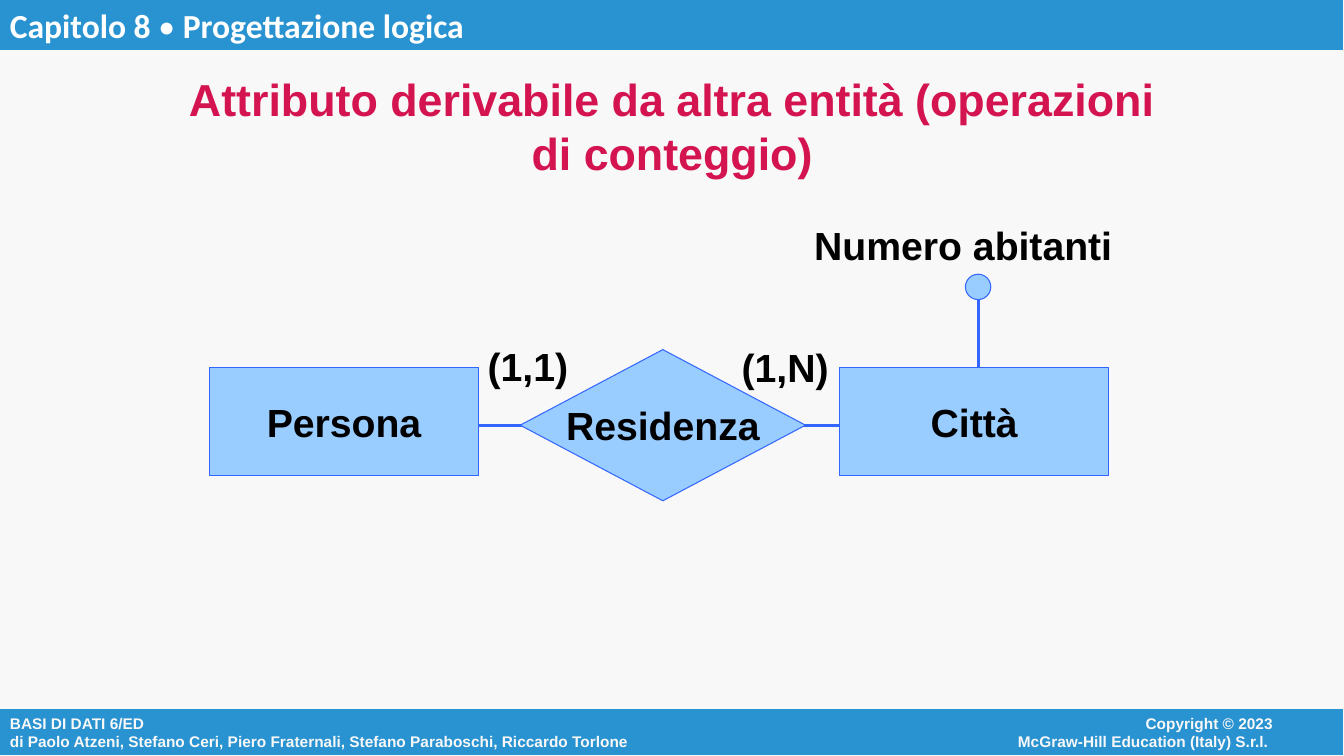
from dataclasses import dataclass

import lxml.etree
import pptx
import pptx.dml.color
import pptx.enum.shapes
import pptx.enum.text
import pptx.oxml.ns
import pptx.util
from pptx.util import Cm

COLORS = {
    "background": "F8F8F8",
    "bar": "2993D1",
    "header_text": "FFFFFF",
    "title": "D41450",
    "node": "99CCFF",
    "outline": "3366FF",
    "label": "000000",
}
SLIDE_WIDTH = 33.87
PRESET = pptx.enum.shapes.MSO_SHAPE
ALIGN = pptx.enum.text.PP_ALIGN
ANCHOR = pptx.enum.text.MSO_ANCHOR


@dataclass(frozen=True)
class Box:
    """Position and size in centimetres."""
    left: float
    top: float
    width: float
    height: float

    def lengths(self) -> tuple:
        return Cm(self.left), Cm(self.top), Cm(self.width), Cm(self.height)


@dataclass(frozen=True)
class Node:
    preset: pptx.enum.shapes.MSO_SHAPE
    box: Box
    text: str = ""


@dataclass(frozen=True)
class Label:
    text: str
    box: Box


@dataclass(frozen=True)
class Line:
    """Start and end points in centimetres."""
    start: tuple[float, float]
    end: tuple[float, float]


HEADER = Box(0, 0, SLIDE_WIDTH, 1.27)
FOOTER = Box(0, 17.86, SLIDE_WIDTH, 1.19)
COPYRIGHT = Box(22.58, 17.86, 9.75, 1.17)
TITLE = Box(3.94, 2.67, 26.01, 0.99)
LINES = [
    Line((11.2, 10.72), (21.56, 10.72)),
    Line((24.66, 7.52), (24.66, 9.42)),
]
NODES = [
    Node(PRESET.DIAMOND, Box(13.11, 8.81, 7.19, 3.81), "Residenza"),
    Node(PRESET.RECTANGLE, Box(5.28, 9.25, 6.78, 2.74), "Persona"),
    Node(PRESET.RECTANGLE, Box(21.16, 9.25, 6.78, 2.74), "Città"),
    Node(PRESET.OVAL, Box(24.33, 6.91, 0.64, 0.64)),
]
LABELS = [
    Label("Numero abitanti", Box(20.27, 5.44, 8.03, 1.42)),
    Label("(1,1)", Box(12.04, 8.51, 2.54, 1.42)),
    Label("(1,N)", Box(18.44, 8.53, 2.69, 1.42)),
]


def rgb(name: str) -> pptx.dml.color.RGBColor:
    return pptx.dml.color.RGBColor.from_string(COLORS[name])


def format_text(text_frame, size: float, color: str, align=ALIGN.LEFT,
                anchor=ANCHOR.TOP, font_name: str = "Arial", wrap: bool = False) -> None:
    text_frame.word_wrap = wrap
    text_frame.auto_size = pptx.enum.text.MSO_AUTO_SIZE.NONE
    text_frame.vertical_anchor = anchor
    for paragraph in text_frame.paragraphs:
        paragraph.alignment = align
        font = paragraph.font
        font.name, font.size, font.bold = font_name, pptx.util.Pt(size), True
        font.color.rgb = rgb(color)


def add_filled_shape(slide, preset, box: Box, fill: str, outline: str, line_width: float = 0.75):
    shape = slide.shapes.add_shape(preset, *box.lengths())
    shape.shadow.inherit = False
    shape.fill.solid()
    shape.fill.fore_color.rgb = rgb(fill)
    shape.line.color.rgb = rgb(outline)
    shape.line.width = pptx.util.Pt(line_width)
    return shape


def add_node(slide, node: Node) -> None:
    shape = add_filled_shape(slide, node.preset, node.box, "node", "outline")
    if node.text:
        shape.text_frame.text = node.text
        format_text(shape.text_frame, 28, "label", ALIGN.CENTER, ANCHOR.MIDDLE)


def add_label(slide, label: Label) -> None:
    text_frame = slide.shapes.add_textbox(*label.box.lengths()).text_frame
    text_frame.text = label.text
    format_text(text_frame, 28, "label")


def add_line(slide, line: Line) -> None:
    connector = slide.shapes.add_connector(
        pptx.enum.shapes.MSO_CONNECTOR.STRAIGHT,
        *(Cm(value) for value in line.start + line.end))
    connector.line.color.rgb = rgb("outline")
    connector.line.width = pptx.util.Pt(2.25)
    lxml.etree.SubElement(connector.element.spPr, pptx.oxml.ns.qn("a:effectLst"))


def add_header(slide) -> None:
    bar = add_filled_shape(slide, PRESET.RECTANGLE, HEADER, "bar", "background", 0)
    paragraph = bar.text_frame.paragraphs[0]
    for text, bold in [("Capitolo 8 ", True), ("•", False), (" Progettazione logica", True)]:
        run = paragraph.add_run()
        run.text = text
        run.font.bold = bold
    format_text(bar.text_frame, 24, "header_text", font_name="Calibri", wrap=True)


def add_footer(slide) -> None:
    bar = add_filled_shape(slide, PRESET.RECTANGLE, FOOTER, "bar", "background")
    bar.text_frame.text = ("BASI DI DATI 6/ED\v"
                           "di Paolo Atzeni, Stefano Ceri, Piero Fraternali, "
                           "Stefano Paraboschi, Riccardo Torlone")
    format_text(bar.text_frame, 11, "background", anchor=ANCHOR.MIDDLE)
    copyright_frame = slide.shapes.add_textbox(*COPYRIGHT.lengths()).text_frame
    copyright_frame.text = "Copyright © 2023\nMcGraw-Hill Education (Italy) S.r.l. "
    format_text(copyright_frame, 11, "background", ALIGN.RIGHT, wrap=True)


def add_title(slide) -> None:
    title = slide.shapes.title
    title.left, title.top, title.width, title.height = TITLE.lengths()
    title.text_frame.text = "Attributo derivabile da altra entità (operazioni di conteggio)"
    format_text(title.text_frame, 32, "title", ALIGN.CENTER, ANCHOR.MIDDLE, wrap=True)


def main() -> None:
    presentation = pptx.Presentation()
    presentation.slide_width = Cm(SLIDE_WIDTH)
    presentation.slide_height = Cm(19.05)
    slide = presentation.slides.add_slide(presentation.slide_layouts.get_by_name("Title Only"))
    slide.background.fill.solid()
    slide.background.fill.fore_color.rgb = rgb("background")

    add_footer(slide)
    add_header(slide)
    add_title(slide)
    for line in LINES:
        add_line(slide, line)
    for node in NODES:
        add_node(slide, node)
    for label in LABELS:
        add_label(slide, label)
    presentation.save("out.pptx")


if __name__ == "__main__":
    main()
